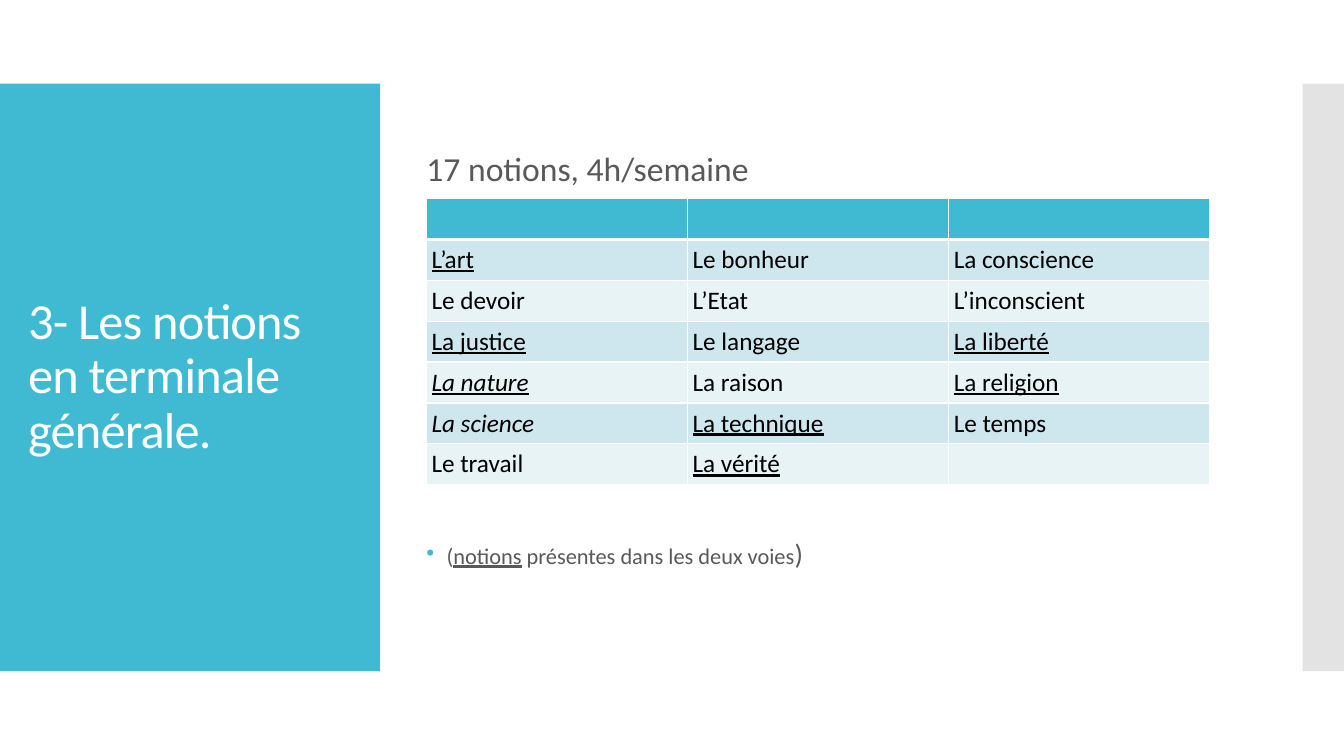
from lxml import etree
from pptx import Presentation
from pptx.dml.color import RGBColor
from pptx.enum.shapes import MSO_SHAPE
from pptx.enum.text import MSO_ANCHOR, MSO_AUTO_SIZE, PP_ALIGN
from pptx.oxml.ns import qn
from pptx.util import Inches, Pt

RECTANGLE = MSO_SHAPE.RECTANGLE
TOP, MIDDLE = MSO_ANCHOR.TOP, MSO_ANCHOR.MIDDLE
NO_AUTOFIT = MSO_AUTO_SIZE.NONE
LEFT = PP_ALIGN.LEFT

TURQUOISE = RGBColor(0x40, 0xBA, 0xD2)
LIGHT_GREY = RGBColor(0xE3, 0xE3, 0xE3)
DARK_GREY = RGBColor(0x59, 0x59, 0x59)
BAND_DARK = RGBColor(0xCE, 0xE6, 0xEE)
BAND_LIGHT = RGBColor(0xE8, 0xF3, 0xF6)
WHITE = RGBColor(0xFF, 0xFF, 0xFF)
BLACK = RGBColor(0, 0, 0)

UNDERLINED = {"underline": True}
ITALIC = {"italic": True}
NOTIONS = [
    ["L’art", "Le bonheur", "La conscience"],
    ["Le devoir", "L’Etat", "L’inconscient"],
    ["La justice", "Le langage", "La liberté"],
    ["La nature", "La raison", "La religion"],
    ["La science", "La technique", "Le temps"],
    ["Le travail", "La vérité", ""],
]
NOTION_FORMATS = {
    "L’art": UNDERLINED,
    "La justice": UNDERLINED,
    "La liberté": UNDERLINED,
    "La nature": UNDERLINED | ITALIC,
    "La religion": UNDERLINED,
    "La science": ITALIC,
    "La technique": UNDERLINED,
    "La vérité": UNDERLINED,
}


def set_attributes(target, values):
    for name, value in values.items():
        setattr(target, name, value)


def set_border(cell, side, width):
    """Draw a white line on one side (L, R, T or B); call before filling the cell."""
    properties = cell._tc.get_or_add_tcPr()
    line = etree.SubElement(properties, qn(f"a:ln{side}"), w=str(Pt(width)))
    fill = etree.SubElement(line, qn("a:solidFill"))
    etree.SubElement(fill, qn("a:srgbClr"), val=str(WHITE))


def set_bullet(paragraph, character=None):
    """Give the paragraph a turquoise hanging bullet, or none."""
    properties = paragraph._p.get_or_add_pPr()
    indent = Inches(0.2) if character else 0
    properties.set("marL", str(indent))
    properties.set("indent", str(-indent))
    if character:
        color = etree.SubElement(properties, qn("a:buClr"))
        etree.SubElement(color, qn("a:srgbClr"), val=str(TURQUOISE))
        etree.SubElement(properties, qn("a:buChar"), char=character)
    else:
        etree.SubElement(properties, qn("a:buNone"))


class SlideBuilder:
    font_name = "Calibri"

    def __init__(self, slide):
        self.slide = slide

    def add_run(self, paragraph, text, size, color, formats=None):
        run = paragraph.add_run()
        run.text = text
        values = {"name": self.font_name, "size": Pt(size)} | (formats or {})
        set_attributes(run.font, values)
        run.font.color.rgb = color
        return run

    def add_panel(self, left, width, color):
        shape = self.slide.shapes.add_shape(
            RECTANGLE, Inches(left), Inches(0.83), Inches(width), Inches(5.83))
        shape.shadow.inherit = False
        shape.fill.solid()
        shape.fill.fore_color.rgb = color
        shape.line.fill.background()

    def place(self, placeholder, left, top, width, height, anchor):
        """Move a placeholder to the front and return its text frame without insets."""
        self.slide.shapes._spTree.append(placeholder._element)
        set_attributes(placeholder, {
            "left": Inches(left), "top": Inches(top),
            "width": Inches(width), "height": Inches(height)})
        frame = placeholder.text_frame
        set_attributes(frame, {
            "margin_left": 0, "margin_right": 0, "margin_top": 0, "margin_bottom": 0,
            "word_wrap": True, "auto_size": NO_AUTOFIT, "vertical_anchor": anchor})
        return frame

    def add_title(self, lines):
        frame = self.place(self.slide.shapes.title, 0.28, 1.23, 3.22, 5.03, MIDDLE)
        paragraph = frame.paragraphs[0]
        set_attributes(paragraph, {"alignment": LEFT, "line_spacing": 0.9})
        for index, line in enumerate(lines):
            if index:
                paragraph.add_line_break()
            run = self.add_run(paragraph, line, 36, WHITE)
            run._r.get_or_add_rPr().set("spc", "-60")

    def add_table(self, rows):
        """Add a banded table under an empty turquoise header row."""
        column_count, row_count = len(rows[0]), len(rows) + 1
        table = self.slide.shapes.add_table(
            row_count, column_count, Inches(4.23), Inches(1.97),
            Inches(2.59 * column_count), Inches(0.4 * row_count)).table
        for row_index, texts in enumerate([[""] * column_count] + rows):
            color = (BAND_DARK if row_index % 2 else BAND_LIGHT) if row_index else TURQUOISE
            for column_index, text in enumerate(texts):
                self.fill_cell(table.cell(row_index, column_index), text, color, row_index)

    def fill_cell(self, cell, text, color, row_index):
        thick_sides = {0: "B", 1: "T"}
        for side in "LRTB":
            set_border(cell, side, 3 if thick_sides.get(row_index) == side else 0.96)
        cell.fill.solid()
        cell.fill.fore_color.rgb = color
        for side in ("left", "right", "top", "bottom"):
            setattr(cell, f"margin_{side}", Inches(0.05))
        if text:
            self.add_run(cell.text_frame.paragraphs[0], text, 18, BLACK,
                         NOTION_FORMATS.get(text))

    def add_body(self, heading, note_runs):
        """Set the heading above the table and the bulleted note below it."""
        frame = self.place(self.slide.placeholders[1], 4.23, 0.87, 8.19, 5.73, TOP)
        frame.margin_top = Inches(0.64)
        first, note = frame.paragraphs[0], frame.add_paragraph()
        for paragraph, space in ((first, 0), (note, 251)):
            set_attributes(paragraph, {
                "alignment": LEFT, "line_spacing": 0.9, "space_before": Pt(space)})
        set_bullet(first)
        set_bullet(note, "•")
        self.add_run(first, heading, 24, DARK_GREY)
        for text, size, formats in note_runs:
            self.add_run(note, text, size, DARK_GREY, formats)


def main():
    presentation = Presentation()
    presentation.slide_width = Inches(13.33)
    presentation.slide_height = Inches(7.5)
    slide = presentation.slides.add_slide(presentation.slide_layouts[1])
    builder = SlideBuilder(slide)
    builder.add_panel(0, 3.77, TURQUOISE)
    builder.add_panel(12.92, 0.41, LIGHT_GREY)
    builder.add_title(["3- Les notions", "en terminale générale."])
    builder.add_table(NOTIONS)
    builder.add_body("17 notions, 4h/semaine", [
        ("(", 16, None),
        ("notions", 16, UNDERLINED),
        (" présentes dans les deux voies", 16, None),
        (")", 20, None),
    ])
    presentation.save("out.pptx")


if __name__ == "__main__":
    main()
